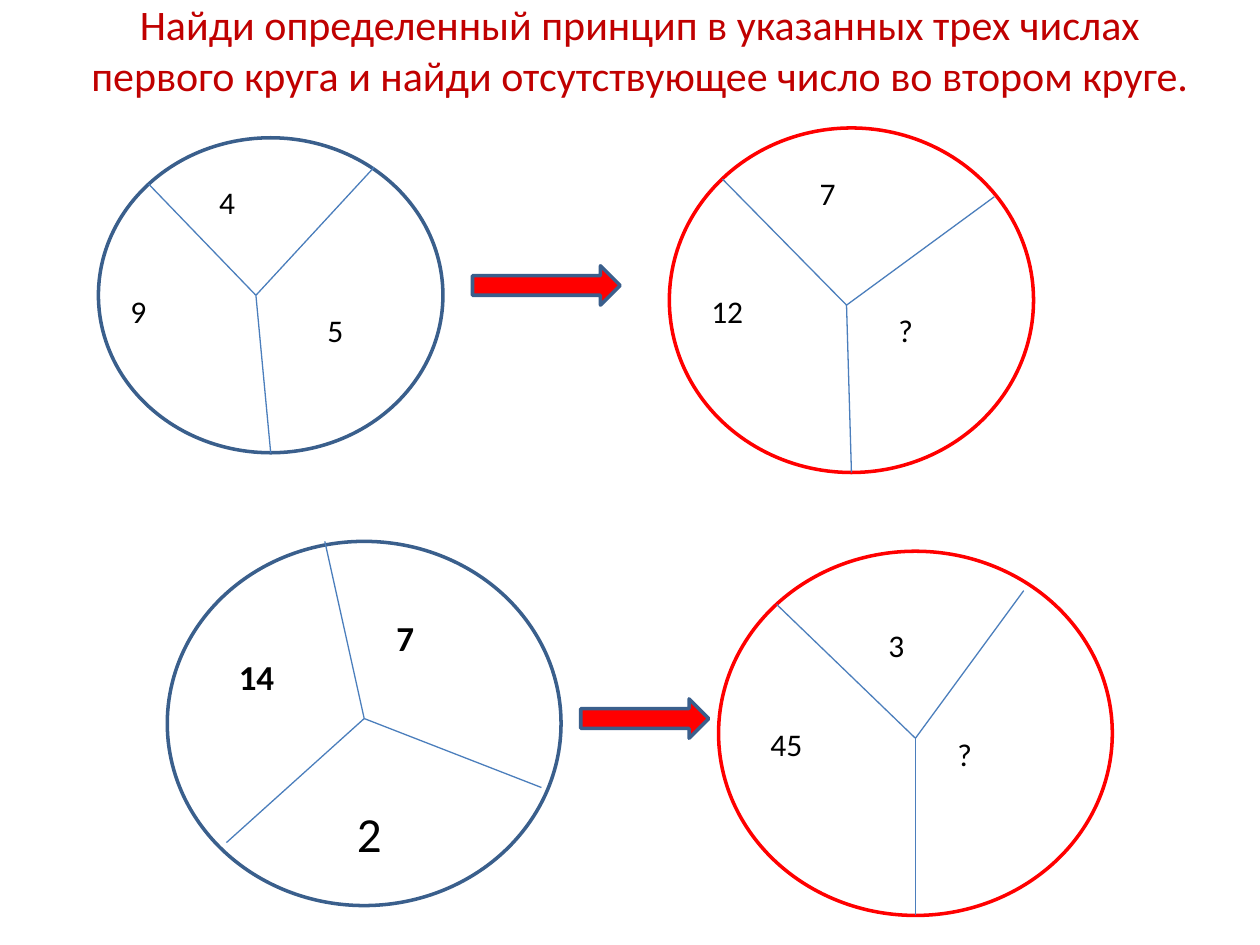
from dataclasses import dataclass

from lxml.etree import SubElement
from pptx import Presentation
from pptx.dml.color import RGBColor
from pptx.enum.shapes import MSO_CONNECTOR, MSO_SHAPE
from pptx.enum.text import MSO_ANCHOR, MSO_AUTO_SIZE, PP_ALIGN
from pptx.oxml.ns import qn
from pptx.util import Inches, Pt


@dataclass(frozen=True)
class Theme:
    font: str = "Calibri"
    title: str = "C00000"
    text: str = "000000"
    white: str = "FFFFFF"
    red: str = "FF0000"
    blue: str = "3A5F8C"
    spoke: str = "4B7EBC"
    title_size: int = 24
    small: int = 18
    medium: int = 20
    large: int = 28
    outline_width: float = 2
    spoke_width: float = 0.75


THEME = Theme()
SLIDE_WIDTH, SLIDE_HEIGHT = 10, 7.5
COLUMNS = 128
CELL = SLIDE_WIDTH / COLUMNS
LINE_HEIGHT = 1.22
VERTICAL_INSETS = 0.1

TITLE = ("Найди определенный принцип в указанных трех числах "
         "первого круга и найди отсутствующее число во втором круге.")
TITLE_BOX = (7, -3, 116, 16)

CIRCLES = [
    {
        "box": (10, 14, 35, 32), "outline": THEME.blue, "fill": None,
        "hub": (26, 30), "rim": [(15.1, 18.7), (38, 17), (27.5, 46)],
        "numbers": [("4", 21, 18, 8), ("5", 32, 31, 8), ("9", 12, 29, 9)],
    },
    {
        "box": (68, 13, 37, 35), "outline": THEME.red, "fill": THEME.white,
        "hub": (86, 31), "rim": [(73.4, 18.2), (101, 20), (86.5, 48)],
        "numbers": [("12", 71, 29, 9), ("7", 82, 17, 9), ("?", 90, 31, 6)],
    },
    {
        "box": (17, 55, 40, 37), "outline": THEME.blue, "fill": None,
        "hub": (37, 73), "rim": [(33, 55), (23, 85.6), (55, 80)],
        "numbers": [("14", 23, 66, 8, THEME.medium, True),
                    ("7", 39, 62, 8, THEME.medium, True),
                    ("2", 35, 81, 9, THEME.large)],
    },
    {
        "box": (73, 56, 40, 37), "outline": THEME.red, "fill": THEME.white,
        "hub": (93, 75), "rim": [(78.9, 61.4), (104, 60), (93, 93)],
        "numbers": [("45", 77, 73, 9), ("3", 89, 63, 6), ("?", 96, 74, 10)],
    },
]
ARROWS = [(48, 27, 15, 4), (59, 71, 13, 4)]


def cells(*values):
    return [Inches(value * CELL) for value in values]


def color(value):
    return RGBColor.from_string(value)


def add_outlined_shape(slide, kind, box, outline, fill):
    shape = slide.shapes.add_shape(kind, *cells(*box))
    shape.shadow.inherit = False
    shape.line.color.rgb = color(outline)
    shape.line.width = Pt(THEME.outline_width)
    if fill:
        shape.fill.solid()
        shape.fill.fore_color.rgb = color(fill)
    else:
        shape.fill.background()


def add_spoke(slide, hub, rim):
    spoke = slide.shapes.add_connector(MSO_CONNECTOR.STRAIGHT, *cells(*hub, *rim))
    spoke.line.color.rgb = color(THEME.spoke)
    spoke.line.width = Pt(THEME.spoke_width)
    SubElement(spoke._element.spPr, qn("a:effectLst"))


def add_text(slide, text, box, size, text_color, bold=False):
    shape = slide.shapes.add_textbox(*cells(*box))
    frame = shape.text_frame
    frame.word_wrap = True
    paragraph = frame.paragraphs[0]
    paragraph.text = text
    font = paragraph.font
    font.name, font.size, font.bold = THEME.font, Pt(size), bold
    font.color.rgb = color(text_color)
    return frame


def add_number(slide, text, left, top, width, size=THEME.small, bold=False):
    height = (size * LINE_HEIGHT / 72 + VERTICAL_INSETS) / CELL
    frame = add_text(slide, text, (left, top, width, height), size, THEME.text, bold)
    frame.auto_size = MSO_AUTO_SIZE.SHAPE_TO_FIT_TEXT


def add_title(slide):
    frame = add_text(slide, TITLE, TITLE_BOX, THEME.title_size, THEME.title)
    frame.vertical_anchor = MSO_ANCHOR.MIDDLE
    frame.paragraphs[0].alignment = PP_ALIGN.CENTER


def main():
    presentation = Presentation()
    presentation.slide_width = Inches(SLIDE_WIDTH)
    presentation.slide_height = Inches(SLIDE_HEIGHT)
    slide = presentation.slides.add_slide(presentation.slide_layouts[6])
    for circle in CIRCLES:
        add_outlined_shape(slide, MSO_SHAPE.OVAL, circle["box"],
                           circle["outline"], circle["fill"])
        for rim in circle["rim"]:
            add_spoke(slide, circle["hub"], rim)
        for number in circle["numbers"]:
            add_number(slide, *number)
    add_title(slide)
    for box in ARROWS:
        add_outlined_shape(slide, MSO_SHAPE.RIGHT_ARROW, box, THEME.blue, THEME.red)
    presentation.save("out.pptx")


if __name__ == "__main__":
    main()
